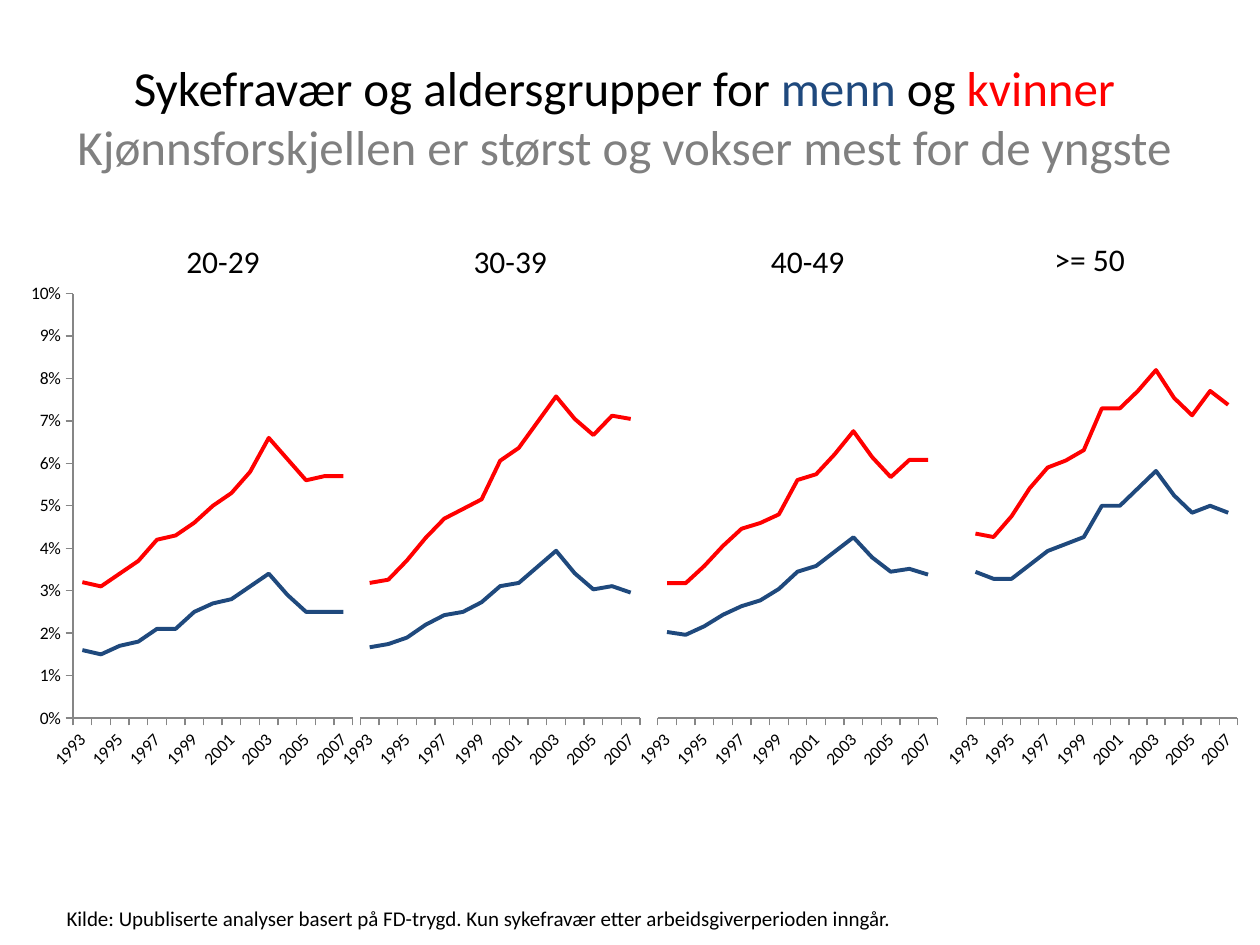
"""Build a slide of four line charts on sickness absence by age group and sex."""
import pptx
import pptx.chart.data
import pptx.dml.color
import pptx.enum.chart
import pptx.enum.text
import pptx.oxml
import pptx.oxml.ns
import pptx.util

Inches, Pt = pptx.util.Inches, pptx.util.Pt
RGBColor = pptx.dml.color.RGBColor
BLACK = RGBColor(0x00, 0x00, 0x00)
RED = RGBColor(0xFF, 0x00, 0x00)
NAVY = RGBColor(0x1F, 0x49, 0x7D)
GREY = RGBColor(0x80, 0x80, 0x80)
AXIS_GREY = RGBColor(0x86, 0x86, 0x86)

CHART_TOP, CHART_HEIGHT = 2.18, 4.02
PLOT_TOP, PLOT_HEIGHT = 2.33, 3.37
YEARS = [str(year) for year in range(1993, 2008)]
GROUPS = [
    dict(age="20-29", left=0.2, width=2.66, plot=(0.58, 2.22), top=0.1, label=(1.38, 1.87, 0.79),
         women=[0.032, 0.031, 0.034, 0.037, 0.042, 0.043, 0.046, 0.05, 0.053, 0.058, 0.066, 0.061, 0.056, 0.057, 0.057],
         men=[0.016, 0.015, 0.017, 0.018, 0.021, 0.021, 0.025, 0.027, 0.028, 0.031, 0.034, 0.029, 0.025, 0.025, 0.025]),
    dict(age="30-39", left=2.64, width=2.49, plot=(2.86, 2.22), top=132, label=(3.66, 1.87, 0.79),
         women=[42, 43, 49, 56, 62, 65, 68, 80, 84, 92, 100, 93, 88, 94, 93],
         men=[22, 23, 25, 29, 32, 33, 36, 41, 42, 47, 52, 45, 40, 41, 39]),
    dict(age="40-49", left=5, width=2.5, plot=(5.22, 2.22), top=148, label=(6.02, 1.87, 0.79),
         women=[47, 47, 53, 60, 66, 68, 71, 83, 85, 92, 100, 91, 84, 90, 90],
         men=[30, 29, 32, 36, 39, 41, 45, 51, 53, 58, 63, 56, 51, 52, 50]),
    dict(age=">= 50", left=7.44, width=2.42, plot=(7.67, 2.15), top=122, label=(8.27, 1.86, 0.83),
         women=[53, 52, 58, 66, 72, 74, 77, 89, 89, 94, 100, 92, 87, 94, 90],
         men=[42, 40, 40, 44, 48, 50, 52, 61, 61, 66, 71, 64, 59, 61, 59]),
]


def add_span(para, text, size, color):
    span = para.add_run()
    span.text = text
    for name, value in dict(name="Calibri", size=Pt(size)).items():
        setattr(span.font, name, value)
    span.font.color.rgb = color


def add_label(page, text, left, top, width, height, size):
    box = page.shapes.add_textbox(Inches(left), Inches(top), Inches(width), Inches(height))
    box.text_frame.word_wrap = False
    box.text_frame.auto_size = pptx.enum.text.MSO_AUTO_SIZE.SHAPE_TO_FIT_TEXT
    add_span(box.text_frame.paragraphs[0], text, size, BLACK)


deck = pptx.Presentation()
deck.slide_width, deck.slide_height = Inches(10), Inches(7.5)
page = deck.slides.add_slide(deck.slide_layouts[5])
qn = pptx.oxml.ns.qn

for group in GROUPS:
    data = pptx.chart.data.CategoryChartData(number_format="0%")
    data.categories = YEARS
    data.add_series("Kvinner", group["women"])
    data.add_series("Menn", group["men"])
    chart = page.shapes.add_chart(
        pptx.enum.chart.XL_CHART_TYPE.LINE, Inches(group["left"]), Inches(CHART_TOP),
        Inches(group["width"]), Inches(CHART_HEIGHT), data).chart
    chart.has_legend = chart.has_title = False
    for name, value in dict(name="Calibri", size=Pt(10)).items():
        setattr(chart.font, name, value)
    chart.font.color.rgb = BLACK
    chart.plots[0].vary_by_categories = False
    for series, color in zip(chart.plots[0].series, (RED, NAVY)):
        series.smooth = False
        series.marker.style = pptx.enum.chart.XL_MARKER_STYLE.NONE
        series.format.line.width = Pt(2.25)
        series.format.line.color.rgb = color

    years, rate = chart.category_axis, chart.value_axis
    for axis in (years, rate):
        axis.has_major_gridlines = False
        axis.major_tick_mark = pptx.enum.chart.XL_TICK_MARK.OUTSIDE
        axis.format.line.color.rgb = AXIS_GREY
        axis.tick_labels.font.size = Pt(10)
    scale = dict(minimum_scale=0, maximum_scale=group["top"], major_unit=group["top"] / 10,
                 visible=group is GROUPS[0])
    for name, value in scale.items():
        setattr(rate, name, value)
    rate.tick_labels.number_format = "0%"
    rate.tick_labels.number_format_is_linked = False

    chart_ns = pptx.oxml.ns.nsdecls("c")
    years._element.find(qn("c:txPr")).find(qn("a:bodyPr")).set("rot", "-2700000")
    years._element.find(qn("c:noMultiLvlLbl")).addprevious(
        pptx.oxml.parse_xml(f'<c:tickLblSkip {chart_ns} val="2"/>'))
    if rate._element.find(qn("c:crossBetween")) is None:
        rate._element.find(qn("c:crosses")).addnext(
            pptx.oxml.parse_xml(f'<c:crossBetween {chart_ns} val="between"/>'))

    plot_left, plot_width = group["plot"]
    shares = dict(x=(plot_left - group["left"]) / group["width"],
                  y=(PLOT_TOP - CHART_TOP) / CHART_HEIGHT,
                  w=plot_width / group["width"], h=PLOT_HEIGHT / CHART_HEIGHT)
    places = "".join(f'<c:{key} val="{share:.4f}"/>' for key, share in shares.items())
    layout = pptx.oxml.parse_xml(
        f'<c:layout {chart_ns}><c:manualLayout><c:layoutTarget val="inner"/>'
        f'<c:xMode val="edge"/><c:yMode val="edge"/>{places}</c:manualLayout></c:layout>')
    area = chart._chartSpace.find(qn("c:chart")).find(qn("c:plotArea"))
    for old in area.findall(qn("c:layout")):
        area.remove(old)
    area.insert(0, layout)

for group in GROUPS:
    add_label(page, group["age"], *group["label"], 0.4, 18)

title = page.shapes.title
for name, value in dict(left=0.5, top=0.3, width=9, height=1.25).items():
    setattr(title, name, Inches(value))
title.text_frame.vertical_anchor = pptx.enum.text.MSO_ANCHOR.MIDDLE
para = title.text_frame.paragraphs[0]
para.alignment = pptx.enum.text.PP_ALIGN.CENTER
for text, color in (("Sykefravær og aldersgrupper for ", BLACK), ("menn", NAVY),
                    (" og ", BLACK), ("kvinner ", RED)):
    add_span(para, text, 28, color)
para.add_line_break()
add_span(para, "Kjønnsforskjellen er størst og vokser mest for de yngste ", 28, GREY)

add_label(page, "Kilde: Upubliserte analyser basert på FD-trygd. "
          "Kun sykefravær etter arbeidsgiverperioden inngår.", 0.43, 7.14, 6.8, 0.3, 12)

deck.save("out.pptx")
